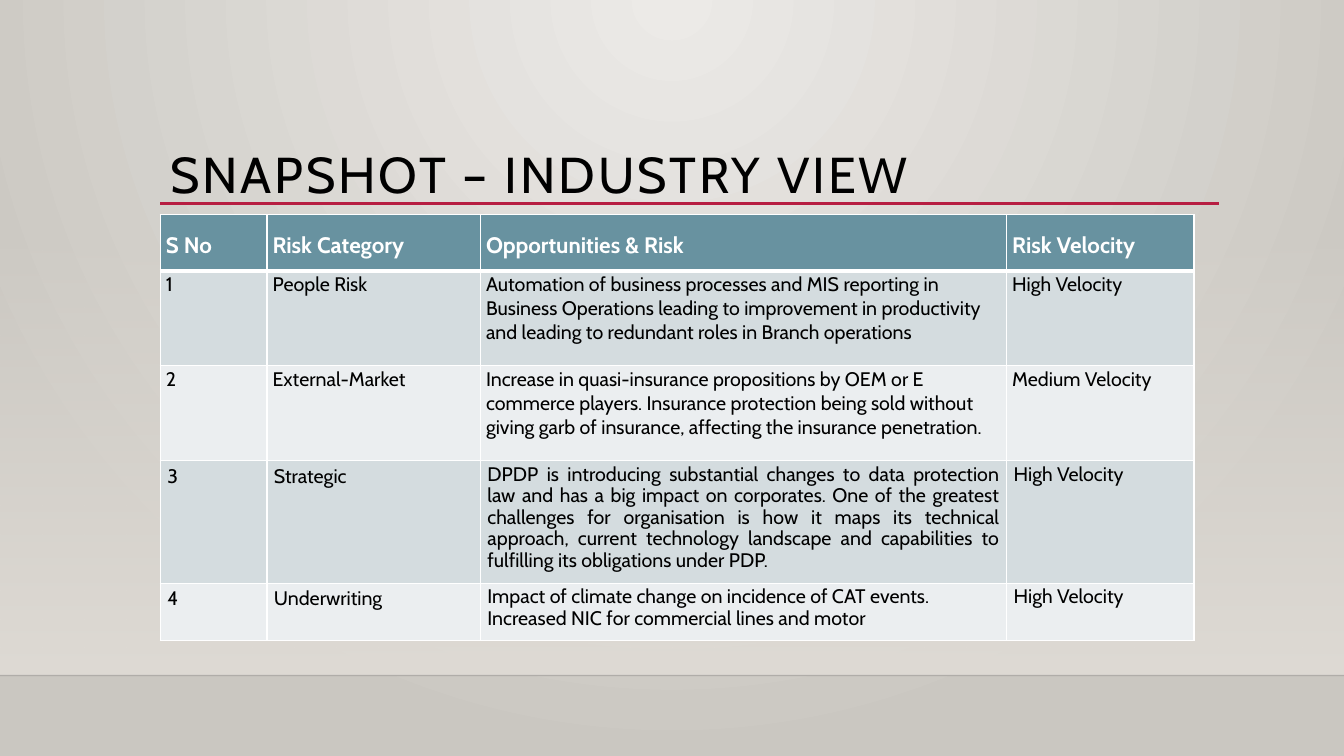
from dataclasses import dataclass

from lxml.etree import SubElement
from pptx import Presentation
from pptx.dml.color import RGBColor
from pptx.enum.shapes import MSO_CONNECTOR as Connector, MSO_SHAPE as Shape
from pptx.enum.text import MSO_ANCHOR as Anchor, MSO_AUTO_SIZE as AutoSize, PP_ALIGN as Align
from pptx.oxml import parse_xml
from pptx.oxml.ns import nsdecls, qn
from pptx.util import Pt

# Content
TITLE = "SNAPSHOT – INDUSTRY VIEW"
HEADER = ("S No", "Risk Category", "Opportunities & Risk", "Risk Velocity")
RISKS = [
    ("1", "People Risk",
     "Automation of business processes and MIS reporting in Business Operations leading to "
     "improvement in productivity and leading to redundant roles in Branch operations",
     "High Velocity"),
    ("2", "External-Market",
     "Increase in quasi-insurance propositions by OEM or E commerce players. Insurance protection "
     "being sold without giving garb of insurance, affecting the insurance penetration.",
     "Medium Velocity"),
    ("3", "Strategic",
     "DPDP is introducing substantial changes to data protection law and has a big impact on "
     "corporates. One of the greatest challenges for organisation is how it maps its technical "
     "approach, current technology landscape and capabilities to fulfilling its obligations "
     "under PDP.",
     "High Velocity"),
    ("4", "Underwriting",
     "Impact of climate change on incidence of CAT events. Increased NIC for commercial lines "
     "and motor",
     "High Velocity"),
]


@dataclass(frozen=True)
class Theme:
    font: str = "Cabin"
    title_size: int = 36
    header_size: int = 16
    body_size: int = 14
    text: str = "000000"
    white: str = "FFFFFF"
    accent: str = "B71E42"
    header_fill: str = "6892A0"
    bands: tuple = ("D4DCDF", "EBEEF0")
    glow: str = "ECEAE7"
    edge: str = "CAC7C1"
    wall: str = "DFDBD5"
    floor_line: str = "000001"


# Layout, in points
PAGE_W, PAGE_H = 960, 540
LEFT = 114.5
WALL_TOP, FLOOR = 159, 482.5
RULE_Y, RULE_RIGHT = 145.2, 871
TITLE_BOX = (LEFT, 63.2, 756, 82.6)
TABLE_TOP = 153.2
COLUMNS = (76.2, 152.5, 375.9, 133.9)
ROWS = (40.3, 67.8, 67.8, 87.6, 41)
WIDE_INSETS = (4, 1.2, 5.8, 8.6)  # left, top, right, bottom
TIGHT_INSETS = (5, 2.5, 5, 2.5)
FIRST_TIGHT_ROW = 3
THIN, THICK = 1, 3

theme = Theme()


def rgb(code):
    return RGBColor.from_string(code)


def add_alpha(fill_parent, percent):
    color = next(fill_parent.iter(qn("a:srgbClr")))
    SubElement(color, qn("a:alpha")).set("val", str(percent * 1000))


def set_gradient(fill, first, last):
    fill.gradient()
    for stop, color, position in zip(fill.gradient_stops, (first, last), (0, 1)):
        stop.color.rgb = rgb(color)
        stop.position = position


def set_font(para, size, color, bold=False):
    font = para.font
    font.name, font.size, font.bold = theme.font, Pt(size), bold
    font.color.rgb = rgb(color)


def set_insets(frame, insets):
    sides = ("margin_left", "margin_top", "margin_right", "margin_bottom")
    for side, inset in zip(sides, insets):
        setattr(frame, side, Pt(inset))


def add_line(slide, left, right, y, color, width):
    line = slide.shapes.add_connector(Connector.STRAIGHT, Pt(left), Pt(y), Pt(right), Pt(y))
    line.line.color.rgb = rgb(color)
    line.line.width = Pt(width)
    SubElement(line._element.spPr, qn("a:effectLst"))
    return line


def set_borders(cell, top, bottom):
    widths = {"lnL": THIN, "lnR": THIN, "lnT": top, "lnB": bottom}
    properties = cell._tc.get_or_add_tcPr()
    for index, (side, width) in enumerate(widths.items()):
        properties.insert(index, parse_xml(
            f'<a:{side} {nsdecls("a")} w="{Pt(width)}"><a:solidFill>'
            f'<a:srgbClr val="{theme.white}"/></a:solidFill></a:{side}>'))


def add_backdrop(slide):
    # Radial page background, brightest at the top centre
    set_gradient(slide.background.fill, theme.glow, theme.edge)
    gradient = next(slide._element.iter(qn("a:gradFill")))
    gradient.replace(gradient.find(qn("a:lin")), parse_xml(
        f'<a:path {nsdecls("a")} path="circle">'
        '<a:fillToRect l="43000" r="43000" b="100000"/></a:path>'))

    # Wall fading in towards the floor
    wall = slide.shapes.add_shape(
        Shape.RECTANGLE, 0, Pt(WALL_TOP), Pt(PAGE_W), Pt(FLOOR - WALL_TOP))
    wall.shadow.inherit = False
    wall.line.fill.background()
    set_gradient(wall.fill, theme.wall, theme.wall)
    wall.fill.gradient_angle = 270
    add_alpha(wall._element.spPr, 0)

    # Floor edge and title rule
    floor = add_line(slide, 0, PAGE_W, FLOOR, theme.floor_line, 1)
    add_alpha(floor._element.spPr, 20)
    add_line(slide, LEFT, RULE_RIGHT, RULE_Y, theme.accent, 2.5)


def add_title(slide):
    title = slide.shapes.title
    title.left, title.top, title.width, title.height = map(Pt, TITLE_BOX)
    frame = title.text_frame
    frame.text = TITLE
    frame.word_wrap = True
    frame.auto_size = AutoSize.NONE
    frame.vertical_anchor = Anchor.BOTTOM
    set_insets(frame, (7.2, 3.6, 7.2, 0))
    para = frame.paragraphs[0]
    para.alignment = Align.LEFT
    para.line_spacing = 0.9
    set_font(para, theme.title_size, theme.text)
    para._p.pPr.find(qn("a:defRPr")).set("spc", "200")


def add_risk_table(slide):
    table = slide.shapes.add_table(
        len(ROWS), len(COLUMNS), Pt(LEFT), Pt(TABLE_TOP), Pt(sum(COLUMNS)), Pt(sum(ROWS))).table
    table.horz_banding = False
    for column, width in zip(table.columns, COLUMNS):
        column.width = Pt(width)
    for row, height in zip(table.rows, ROWS):
        row.height = Pt(height)

    for r, texts in enumerate([HEADER, *RISKS]):
        is_header, is_tight = r == 0, r >= FIRST_TIGHT_ROW
        for c, text in enumerate(texts):
            cell = table.cell(r, c)
            cell.text = text
            cell.vertical_anchor = Anchor.BOTTOM if is_header else Anchor.TOP
            set_insets(cell, TIGHT_INSETS if is_tight else WIDE_INSETS)
            cell.fill.solid()
            cell.fill.fore_color.rgb = rgb(
                theme.header_fill if is_header else theme.bands[(r - 1) % 2])
            set_borders(cell, THICK if r == 1 else THIN, THICK if is_header else THIN)
            para = cell.text_frame.paragraphs[0]
            if is_tight and c >= 2:
                para.line_spacing = 0.9
            if r == FIRST_TIGHT_ROW and c == 2:
                para.alignment = Align.JUSTIFY
            if is_header:
                set_font(para, theme.header_size, theme.white, bold=True)
            else:
                set_font(para, theme.body_size, theme.text)


def main():
    deck = Presentation()
    deck.slide_width, deck.slide_height = Pt(PAGE_W), Pt(PAGE_H)
    slide = deck.slides.add_slide(deck.slide_layouts[5])
    add_backdrop(slide)
    add_title(slide)
    add_risk_table(slide)
    deck.save("out.pptx")


if __name__ == "__main__":
    main()
